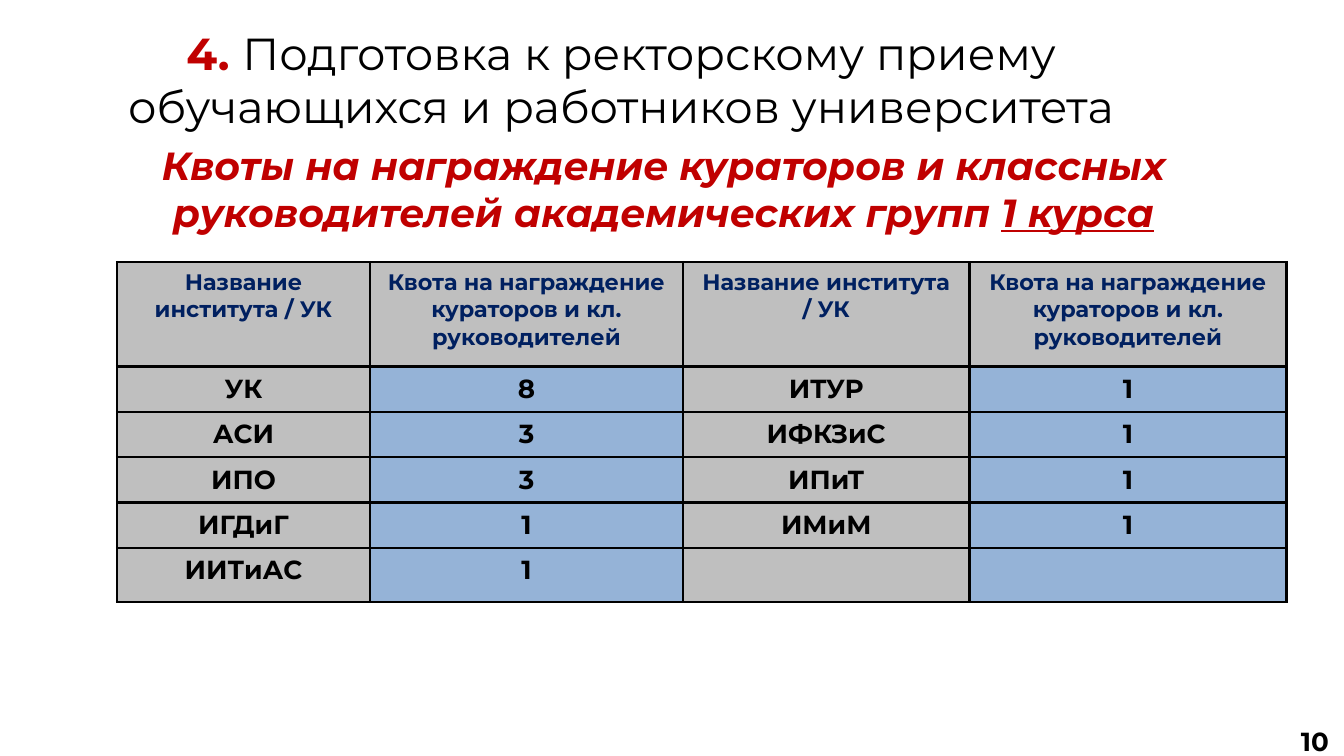
import dataclasses

import pptx
import pptx.dml.color
import pptx.enum.text
import pptx.oxml
import pptx.oxml.ns
import pptx.util

Pt = pptx.util.Pt
CENTER = pptx.enum.text.PP_ALIGN.CENTER


@dataclasses.dataclass(frozen=True)
class Theme:
    font: str = "Montserrat"
    ink: str = "000000"
    accent: str = "C00000"
    heading: str = "002060"
    name_fill: str = "BFBFBF"
    quota_fill: str = "95B3D7"
    title_size: float = 24
    subtitle_size: float = 21
    header_size: float = 12
    body_size: float = 14
    rule: float = 1.5
    last_rule: float = 1


THEME = Theme()

QUOTA_HEADER = "Квота на награждение кураторов и кл. руководителей"
QUOTAS = [
    ["Название института / УК", QUOTA_HEADER, "Название института\n/ УК", QUOTA_HEADER],
    ["УК", "8", "ИТУР", "1"],
    ["АСИ", "3", "ИФКЗиС", "1"],
    ["ИПО", "3", "ИПиТ", "1"],
    ["ИГДиГ", "1", "ИМиМ", "1"],
    ["ИИТиАС", "1", "", ""],
]
COLUMN_WIDTHS = [135.4, 167.8, 153.4, 169.9]
HEADER_HEIGHT, ROW_HEIGHT = 56, 24


def rgb(value):
    return pptx.dml.color.RGBColor.from_string(value)


def add_run(paragraph, text, size, color, **formats):
    run = paragraph.add_run()
    run.text = text
    formats = {"name": THEME.font, "size": Pt(size), "bold": True, **formats}
    for key, value in formats.items():
        setattr(run.font, key, value)
    run.font.color.rgb = rgb(color)


def prepare_text(shape, box, **formats):
    """Place a text shape in its box and return its centred first paragraph."""
    for key, value in zip(("left", "top", "width", "height"), box):
        setattr(shape, key, Pt(value))
    formats = {
        "word_wrap": True,
        "auto_size": pptx.enum.text.MSO_AUTO_SIZE.NONE,
        "vertical_anchor": pptx.enum.text.MSO_ANCHOR.TOP,
        **formats,
    }
    for key, value in formats.items():
        setattr(shape.text_frame, key, value)
    paragraph = shape.text_frame.paragraphs[0]
    paragraph.alignment = CENTER
    paragraph.space_before = Pt(0)
    return paragraph


def place_title(slide, box):
    title = prepare_text(slide.shapes.title, box)
    add_run(title, "4. ", THEME.title_size, THEME.accent)
    add_run(title, "Подготовка к ректорскому приему обучающихся и работников университета",
            THEME.title_size, THEME.ink, bold=False)


def place_subtitle(slide, box):
    subtitle = prepare_text(slide.placeholders[1], box)
    add_run(subtitle, "Квоты на награждение кураторов и классных руководителей академических групп ",
            THEME.subtitle_size, THEME.accent, italic=True)
    add_run(subtitle, "1 курса", THEME.subtitle_size, THEME.accent, italic=True, underline=True)


def place_page_number(slide, box):
    number = prepare_text(slide.shapes.add_textbox(0, 0, 0, 0), box, margin_left=0, margin_right=0)
    add_run(number, "10", THEME.body_size, THEME.ink)


def set_borders(cell, bottom):
    properties = cell._tc.get_or_add_tcPr()
    widths = {"lnL": THEME.rule, "lnR": THEME.rule, "lnT": THEME.rule, "lnB": bottom}
    for side, width in widths.items():
        properties.append(pptx.oxml.parse_xml(
            f'<a:{side} {pptx.oxml.ns.nsdecls("a")} w="{int(Pt(width))}"><a:solidFill>'
            f'<a:srgbClr val="{THEME.ink}"/></a:solidFill></a:{side}>'))


def fill_cell(cell, text, is_header, is_quota, is_last):
    set_borders(cell, THEME.last_rule if is_last else THEME.rule)
    cell.fill.solid()
    cell.fill.fore_color.rgb = rgb(THEME.quota_fill if is_quota and not is_header else THEME.name_fill)
    size, color = (THEME.header_size, THEME.heading) if is_header else (THEME.body_size, THEME.ink)
    for index, line in enumerate(text.split("\n")):
        paragraph = cell.text_frame.paragraphs[0] if index == 0 else cell.text_frame.add_paragraph()
        paragraph.alignment = CENTER
        if line:
            add_run(paragraph, line, size, color)


def place_quota_table(slide, box):
    quotas = slide.shapes.add_table(len(QUOTAS), len(COLUMN_WIDTHS), *map(Pt, box)).table
    quotas.first_row = quotas.horz_banding = False
    for column, width in zip(quotas.columns, COLUMN_WIDTHS):
        column.width = Pt(width)
    for r, values in enumerate(QUOTAS):
        quotas.rows[r].height = Pt(ROW_HEIGHT if r else HEADER_HEIGHT)
        for c, text in enumerate(values):
            fill_cell(quotas.cell(r, c), text, r == 0, c % 2 == 1, r == len(QUOTAS) - 1)


def main():
    deck = pptx.Presentation()
    deck.slide_width, deck.slide_height = Pt(720), Pt(405)
    slide = deck.slides.add_slide(deck.slide_layouts[0])

    # Headings
    place_title(slide, (9.4, 10, 646.6, 65.5))
    place_subtitle(slide, (9.4, 72, 692, 83.5))
    # Quotas by institute
    table_height = HEADER_HEIGHT + ROW_HEIGHT * (len(QUOTAS) - 1)
    place_quota_table(slide, (62.8, 140.4, sum(COLUMN_WIDTHS), table_height))
    # Page number in the corner
    place_page_number(slide, (689, 385, 31, 21))

    deck.save("out.pptx")


if __name__ == "__main__":
    main()
